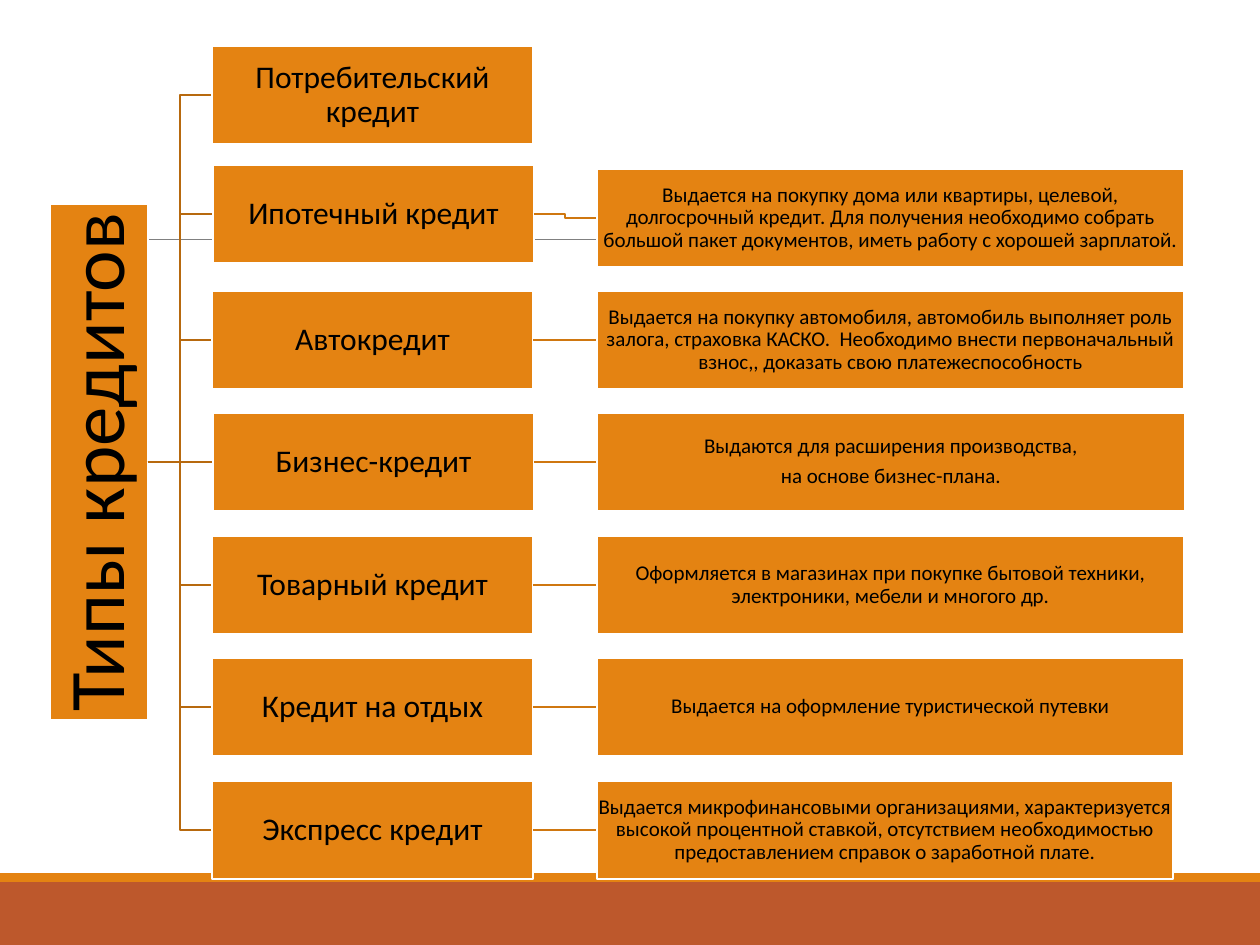
import pptx
import pptx.util
import pptx.enum.shapes
import pptx.enum.text
from dataclasses import dataclass
from lxml import etree
from pptx.dml.color import RGBColor

PX = 914400 / 126


@dataclass
class Theme:
    font: str = "Calibri"
    ink: str = "000000"
    box: str = "E48312"
    edge: str = "FFFFFF"
    base: str = "BD582C"
    rule: str = "808080"
    tree: str = "B7690E"
    link: str = "CF7710"
    thin: float = 0.5
    wide: float = 1.25
    title: int = 45
    label: int = 18
    note: int = 12


theme = Theme()
deck = pptx.Presentation()
deck.slide_width, deck.slide_height = round(1260 * PX), round(945 * PX)
shapes = deck.slides.add_slide(deck.slide_layouts[6]).shapes


def box(x, y, w, h, text="", size=0, fill=theme.box, edge=None, pad=1, turn=0):
    """Add a filled rectangle with centred text, one paragraph a line."""
    rect = shapes.add_shape(pptx.enum.shapes.MSO_SHAPE.RECTANGLE,
                            *(round(n * PX) for n in (x, y, w, h)))
    rect.shadow.inherit = False
    rect.rotation = turn
    rect.fill.solid()
    rect.fill.fore_color.rgb = RGBColor.from_string(fill)
    if edge:
        rect.line.color.rgb = RGBColor.from_string(edge)
        rect.line.width = pptx.util.Pt(theme.wide)
    else:
        rect.line.fill.background()
    if text:
        frame = rect.text_frame
        frame.word_wrap = True
        frame.vertical_anchor = pptx.enum.text.MSO_ANCHOR.MIDDLE
        frame.margin_left = frame.margin_right = round(pad * PX)
        frame.margin_top = frame.margin_bottom = round(pad * PX)
        frame.text = text
        for para in frame.paragraphs:
            para.alignment = pptx.enum.text.PP_ALIGN.CENTER
            para.line_spacing = 0.9
            para.space_after = pptx.util.Pt(round(size * 0.35, 1))
            para.font.size = pptx.util.Pt(size)
            para.font.name = theme.font
            para.font.color.rgb = RGBColor.from_string(theme.ink)
    return rect


def line(x1, y1, x2, y2, color, width=theme.wide):
    """Add a straight connector, or an outline with a middle step if not level."""
    if y1 == y2:
        wire = shapes.add_connector(pptx.enum.shapes.MSO_CONNECTOR.STRAIGHT,
                                    *(round(n * PX) for n in (x1, y1, x2, y2)))
        etree.SubElement(wire._element.spPr, pptx.oxml.ns.qn("a:effectLst"))
    else:
        mid = (x1 + x2) // 2
        pen = shapes.build_freeform(x1, y1, scale=PX)
        pen.add_line_segments([(mid, y1), (mid, y2), (x2, y2)], close=False)
        wire = pen.convert_to_shape()
        wire.shadow.inherit = False
        wire.fill.background()
    wire.line.color.rgb = RGBColor.from_string(color)
    wire.line.width = pptx.util.Pt(width)
    return wire


# Footer bands and the rule behind the diagram
box(0, 882, 1260, 63, fill=theme.base)
box(0, 873, 1260, 9)
line(123, 239, 1153, 239, theme.rule, theme.thin)

# Each row: label, note, label shift (x, y), note shift y, note width
rows = [
    ("Потребительский кредит", "", 0, 0, 0, 0),
    ("Ипотечный кредит",
     "Выдается на покупку дома или квартиры, целевой, долгосрочный кредит. "
     "Для получения необходимо собрать большой пакет документов, "
     "иметь работу с хорошей зарплатой.", 1, -3, 1, 587),
    ("Автокредит",
     "Выдается на покупку автомобиля, автомобиль выполняет роль залога, "
     "страховка КАСКО.  Необходимо внести первоначальный взнос,, "
     "доказать свою платежеспособность", 0, 0, 0, 587),
    ("Бизнес-кредит",
     "Выдаются для расширения производства,\nна основе бизнес-плана.",
     1, 0, 0, 588),
    ("Товарный кредит",
     "Оформляется в магазинах при покупке бытовой техники, "
     "электроники, мебели и многого др.", 0, 0, 0, 587),
    ("Кредит на отдых",
     "Выдается на оформление туристической путевки", 0, 0, 0, 587),
    ("Экспресс кредит",
     "Выдается микрофинансовыми организациями, характеризуется высокой "
     "процентной ставкой, отсутствием необходимостью предоставлением "
     "справок о заработной плате.", 0, 0, 0, 576),
]
tall, wide, left, right = 98, 321, 212, 597
top, last = 46, 781
half = tall // 2
hub = (top + last) // 2 + half

# The root is a wide box turned to read upward
box(99 - 258, hub - half, 516, tall, "Типы кредитов", theme.title,
    edge=theme.edge, pad=4, turn=270)

for i, (name, note, dx, dy, drop, span) in enumerate(rows):
    y = top + (last - top) * i // (len(rows) - 1)
    x, mid = left + dx, y + dy + half
    stem = line(148, hub, x, mid, theme.tree)
    label = box(x, y + dy, wide, tall, name, theme.label, edge=theme.edge)
    if mid == hub:
        stem.end_connect(label, 1)
    if note:
        end = y + drop + half
        link = line(x + wide, mid, right, end, theme.link)
        card = box(right, y + drop, span, tall, note, theme.note,
                   edge=theme.edge)
        if mid == end:
            link.begin_connect(label, 3)
            link.end_connect(card, 1)

deck.save("out.pptx")
